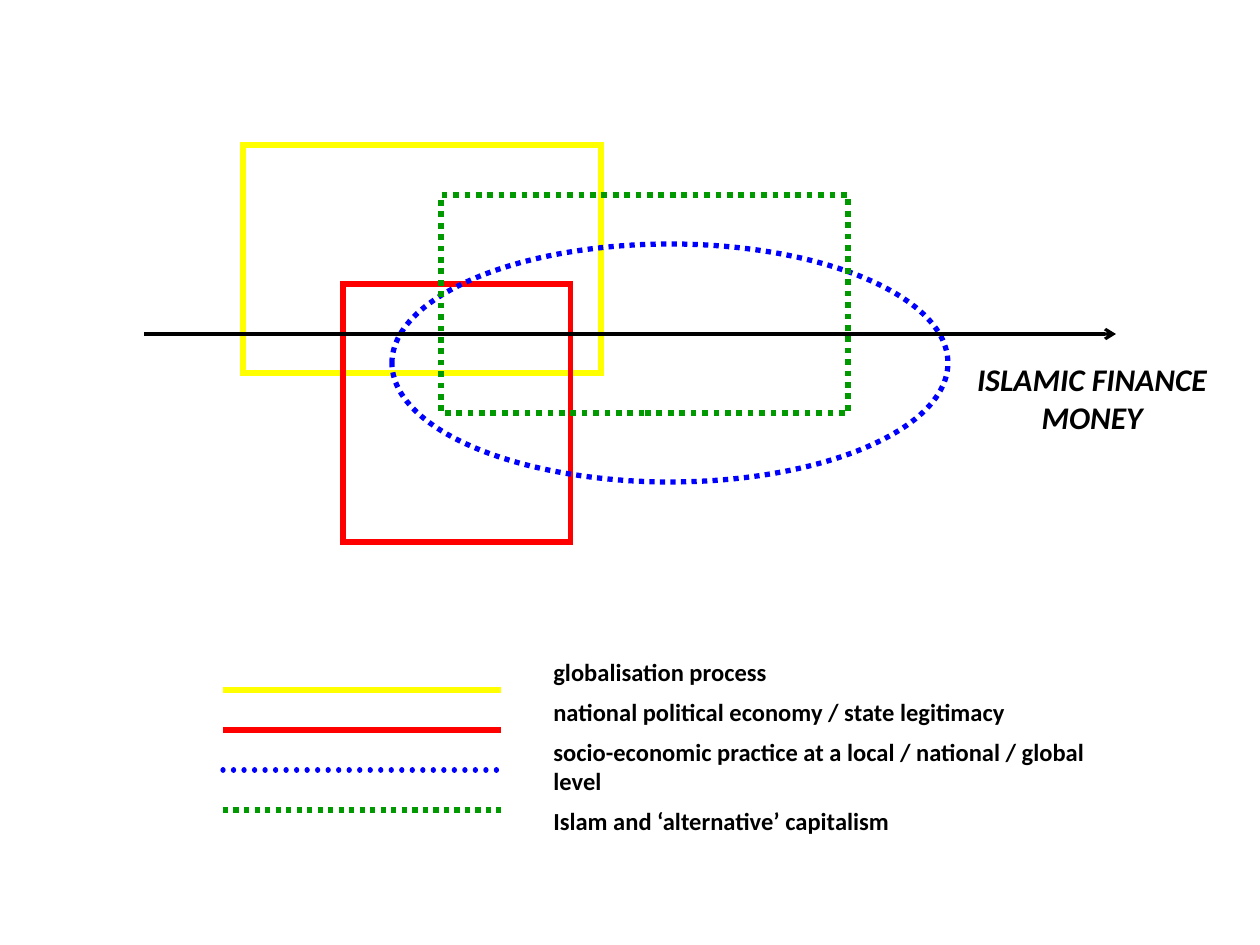
from typing import NamedTuple, Optional

from lxml.etree import SubElement
from pptx import Presentation
from pptx.dml.color import RGBColor
from pptx.enum.dml import MSO_LINE_DASH_STYLE as Dash
from pptx.enum.shapes import MSO_CONNECTOR as Connector, MSO_SHAPE as Shape
from pptx.enum.text import MSO_ANCHOR as Anchor, PP_ALIGN as Align
from pptx.oxml.ns import qn
from pptx.util import Emu, Pt

PX_PER_INCH = 126
YELLOW = RGBColor(0xFF, 0xFF, 0x00)
RED = RGBColor(0xFF, 0x00, 0x00)
BLUE = RGBColor(0x00, 0x00, 0xFF)
GREEN = RGBColor(0x00, 0x99, 0x00)
BLACK = RGBColor(0x00, 0x00, 0x00)

LEGEND_LEFT, LEGEND_RIGHT = 223, 501
LEGEND_TOP, LEGEND_STEP = 690, 40


class Stroke(NamedTuple):
    color: RGBColor
    width: float = 3
    dash: Optional[Dash] = None
    cap: Optional[str] = None
    arrow: bool = False


class Field(NamedTuple):
    outline: Shape
    box: tuple[int, int, int, int]
    stroke: Stroke


class Key(NamedTuple):
    meaning: str
    stroke: Stroke


FIELDS = [
    Field(Shape.RECTANGLE, (243, 145, 358, 228), Stroke(YELLOW, 3.25)),
    Field(Shape.RECTANGLE, (343, 284, 228, 258), Stroke(RED)),
    Field(Shape.OVAL, (392, 244, 556, 238), Stroke(BLUE, dash=Dash.ROUND_DOT)),
    Field(Shape.RECTANGLE, (441, 195, 407, 218), Stroke(GREEN, 3.25, Dash.ROUND_DOT)),
]
KEYS = [
    Key("globalisation process", Stroke(YELLOW)),
    Key("national political economy / state legitimacy", Stroke(RED)),
    Key("socio-economic practice at a local / national / global level",
        Stroke(BLUE, dash=Dash.ROUND_DOT, cap="rnd")),
    Key("Islam and ‘alternative’ capitalism", Stroke(GREEN, dash=Dash.ROUND_DOT)),
]


def px(length: int) -> Emu:
    return Emu(round(length * 914400 / PX_PER_INCH))


def apply_stroke(line, stroke: Stroke) -> None:
    line.color.rgb = stroke.color
    line.width = Pt(stroke.width)
    if stroke.dash is not None:
        line.dash_style = stroke.dash
    ln = line._get_or_add_ln()
    if stroke.cap:
        ln.set("cap", stroke.cap)
    SubElement(ln, qn("a:miter"), lim="800000")
    if stroke.arrow:
        SubElement(ln, qn("a:tailEnd"), type="arrow")


def add_field(slide, field: Field) -> None:
    shape = slide.shapes.add_shape(field.outline, *map(px, field.box))
    shape.shadow.inherit = False
    shape.fill.background()
    apply_stroke(shape.line, field.stroke)


def add_rule(slide, left: int, right: int, y: int, stroke: Stroke) -> None:
    rule = slide.shapes.add_connector(Connector.STRAIGHT, px(left), px(y), px(right), px(y))
    apply_stroke(rule.line, stroke)
    SubElement(rule._element.spPr, qn("a:effectLst"))


def add_text(slide, lines: list[str], box: tuple[int, int, int, int], *, size: int,
             italic: bool = False, align: Align = Align.LEFT, anchor: Anchor = Anchor.TOP,
             space_after: int = 0, wrap: bool = True) -> None:
    frame = slide.shapes.add_textbox(*map(px, box)).text_frame
    frame.word_wrap = wrap
    frame.vertical_anchor = anchor
    frame.text = "\n".join(lines)
    for paragraph in frame.paragraphs:
        paragraph.alignment = align
        paragraph.space_after = Pt(space_after)
        font = paragraph.runs[0].font
        font.name = "Calibri"
        font.size = Pt(size)
        font.bold = True
        font.italic = italic
        font.color.rgb = BLACK


def main() -> None:
    deck = Presentation()
    deck.slide_width, deck.slide_height = px(1260), px(945)
    slide = deck.slides.add_slide(deck.slide_layouts[6])

    add_text(slide, [key.meaning for key in KEYS], (541, 662, 605, 169), size=14,
             anchor=Anchor.MIDDLE, space_after=6, wrap=False)
    for row, key in enumerate(KEYS):
        add_rule(slide, LEGEND_LEFT, LEGEND_RIGHT, LEGEND_TOP + row * LEGEND_STEP, key.stroke)
    for field in FIELDS:
        add_field(slide, field)
    add_rule(slide, 144, 1116, 334, Stroke(BLACK, 1.75, arrow=True))
    add_text(slide, ["ISLAMIC FINANCE", "MONEY"], (958, 354, 268, 89), size=18,
             italic=True, align=Align.CENTER)

    deck.save("out.pptx")


if __name__ == "__main__":
    main()
